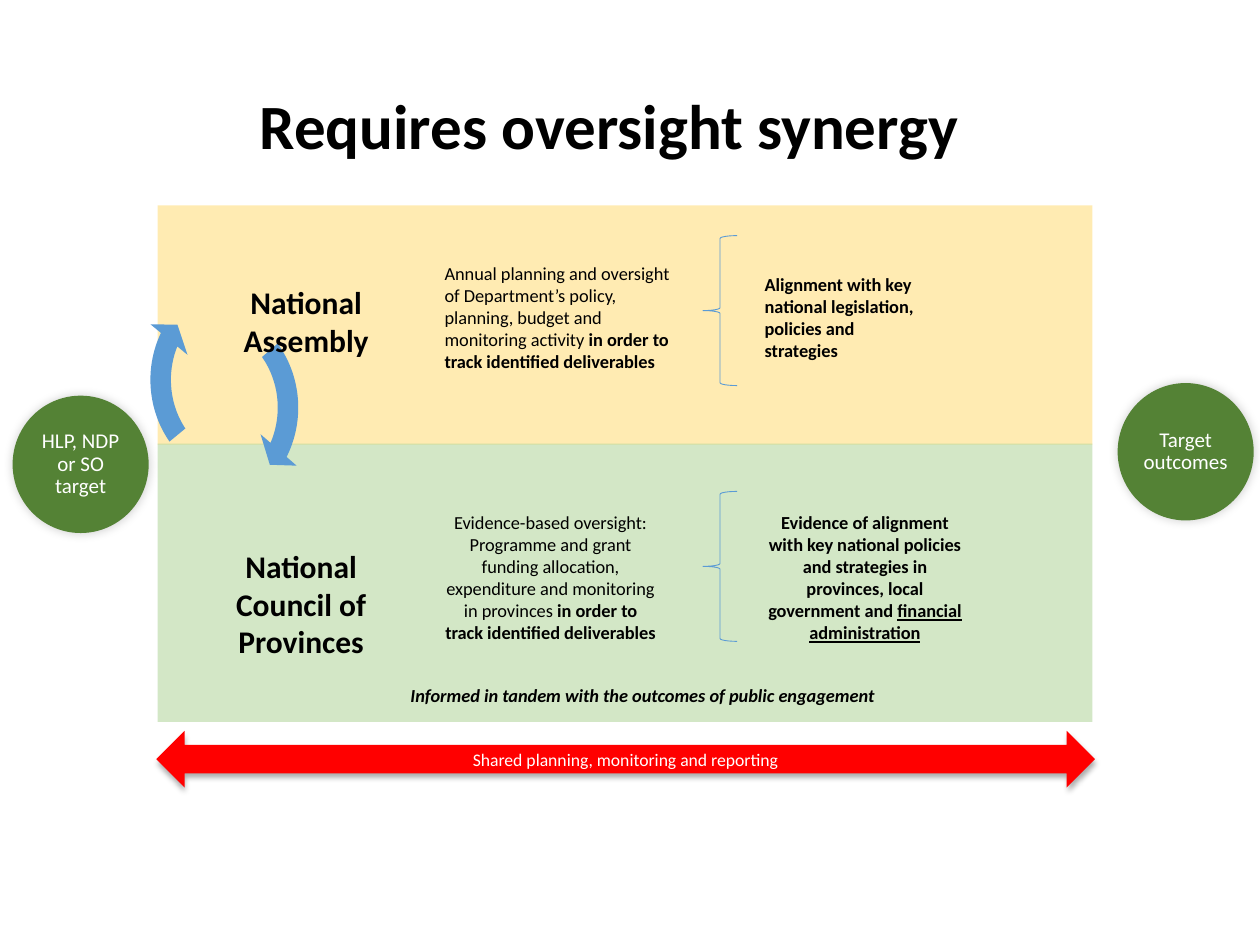
from lxml import etree
from pptx import Presentation
from pptx.dml.color import RGBColor
from pptx.enum.shapes import MSO_SHAPE as Preset
from pptx.enum.text import MSO_ANCHOR as Anchor, MSO_AUTO_SIZE as AutoSize, PP_ALIGN as Align
from pptx.oxml.ns import qn
from pptx.util import Inches, Pt

COLORS = {
    "text": "000000", "light_text": "FFFFFF", "assembly": "FFD966",
    "council": "A9D18E", "cycle": "5B9BD5", "goal": "548235", "shared": "FF0000",
}
FONT = "Calibri"
BODY_SIZE = 10.5
BOLD = {"bold": True}
UNDERLINED = {"bold": True, "underline": True}
DELIVERABLES = ("in order to track identified deliverables", BOLD)


def color(name):
    return RGBColor.from_string(COLORS[name])


def inches(box):
    return [Inches(value) for value in box]


def offset(box, left, top, width, height):
    """Place a part relative to the top left corner of a box."""
    return box[0] + left, box[1] + top, width, height


def write(frame, paragraphs, size, ink="text", **paragraph_format):
    """Fill a text frame; each paragraph is a list of (text, font format) runs."""
    frame.word_wrap = True
    for index, runs in enumerate(paragraphs):
        paragraph = frame.add_paragraph() if index else frame.paragraphs[0]
        for name, value in paragraph_format.items():
            setattr(paragraph, name, value)
        for text, font_format in runs:
            run = paragraph.add_run()
            run.text = text
            run.font.color.rgb = color(ink)
            for name, value in {"name": FONT, "size": Pt(size), **font_format}.items():
                setattr(run.font, name, value)


def add_text(slide, box, paragraphs, size=BODY_SIZE, alignment=Align.LEFT):
    frame = slide.shapes.add_textbox(*inches(box)).text_frame
    write(frame, paragraphs, size, alignment=alignment)
    frame.auto_size = AutoSize.SHAPE_TO_FIT_TEXT


def add_filled(slide, preset, box, fill, opacity=None):
    shape = slide.shapes.add_shape(preset, *inches(box))
    shape.shadow.inherit = False
    shape.fill.solid()
    shape.fill.fore_color.rgb = color(fill)
    shape.line.fill.background()
    if opacity:
        tint = shape._element.spPr.find(qn("a:solidFill"))[0]
        etree.SubElement(tint, qn("a:alpha"), val=str(opacity * 1000))
    return shape


def add_shadow(shape, opacity, blur, distance, angle):
    effects = shape._element.spPr.find(qn("a:effectLst"))
    shadow = etree.SubElement(
        effects, qn("a:outerShdw"), blurRad=str(Pt(blur)), dist=str(Pt(distance)),
        dir=str(angle * 60000), algn="ctr", rotWithShape="0")
    shade = etree.SubElement(shadow, qn("a:srgbClr"), val=COLORS["text"])
    etree.SubElement(shade, qn("a:alpha"), val=str(opacity * 1000))


def add_brace(slide, box):
    brace = slide.shapes.add_shape(Preset.LEFT_BRACE, *inches(box))
    brace.shadow.inherit = False
    brace.fill.background()
    brace.line.color.rgb = color("cycle")
    brace.line.width = Pt(0.5)


def add_title(slide, box):
    title = slide.shapes.title
    title.left, title.top, title.width, title.height = inches(box)
    frame = title.text_frame
    write(frame, [[("Requires oversight synergy", BOLD)]], 36, alignment=Align.LEFT)
    frame.vertical_anchor = Anchor.TOP
    frame.auto_size = AutoSize.SHAPE_TO_FIT_TEXT


def add_cycle(slide, box):
    """Two curved arrows that link the upper and the lower band."""
    for left, top, end_angle, start_angle in (
            (0.32, 0, 70.83, 30.314), (0, 0.22, 179.803, 137.341)):
        arrow = add_filled(slide, Preset.CIRCULAR_ARROW,
                           offset(box, left, top, 1.84, 1.71), "cycle")
        arrow.rotation = 90
        for index, value in enumerate((0.095, 6.857, end_angle, start_angle, 0.111)):
            arrow.adjustments[index] = value


def add_assembly(slide, box):
    add_text(slide, offset(box, 0.56, 0.57, 1.24, 0.71),
             [[("National Assembly", BOLD)]], 18, Align.CENTER)
    add_text(slide, offset(box, 2.18, 0.4, 1.99, 1.16), [[
        ("Annual planning and oversight of Department’s policy, planning, "
         "budget and monitoring activity ", {}), DELIVERABLES]])
    add_brace(slide, offset(box, 4.33, 0.24, 0.27, 1.19))
    add_text(slide, offset(box, 4.72, 0.49, 1.41, 0.81), [[
        ("Alignment with key national legislation, policies and strategies", BOLD)]])


def add_council(slide, box):
    add_text(slide, offset(box, 0.52, 0.77, 1.24, 1.01),
             [[("National Council of Provinces", BOLD)]], 18, Align.CENTER)
    add_text(slide, offset(box, 2.18, 0.49, 1.88, 1.51), [
        [("Evidence-based oversight:", {})],
        [("Programme and grant funding allocation, expenditure and monitoring "
          "in provinces ", {}), DELIVERABLES]], alignment=Align.CENTER)
    add_brace(slide, offset(box, 4.33, 0.38, 0.27, 1.19))
    add_text(slide, offset(box, 4.72, 0.49, 1.79, 1.16), [[
        ("Evidence of alignment with key national policies and strategies in "
         "provinces, local government and ", BOLD),
        ("financial administration", UNDERLINED)]], alignment=Align.CENTER)
    add_text(slide, offset(box, 1.91, 1.86, 3.93, 0.28), [[
        ("Informed in tandem with the outcomes of public engagement",
         {"bold": True, "italic": True})]])


def add_goal(slide, box, label):
    circle = add_filled(slide, Preset.OVAL, box, "goal")
    add_shadow(circle, 20, 6, 0, 315)
    frame = circle.text_frame
    for side in ("left", "top", "right", "bottom"):
        setattr(frame, f"margin_{side}", Inches(0.01))
    frame.vertical_anchor = Anchor.MIDDLE
    write(frame, [[(label, {})]], 12, "light_text",
          alignment=Align.CENTER, line_spacing=0.9)


def add_shared_arrow(slide, box):
    arrow = add_filled(slide, Preset.LEFT_RIGHT_ARROW, box, "shared")
    add_shadow(arrow, 32, 3.5, 2.2, 90)
    arrow.text_frame.vertical_anchor = Anchor.MIDDLE
    write(arrow.text_frame, [[("Shared planning, monitoring and reporting", {})]],
          10.1, "light_text", alignment=Align.CENTER)


def main():
    presentation = Presentation()
    presentation.slide_width, presentation.slide_height = Inches(10), Inches(7.5)
    slide = presentation.slides.add_slide(presentation.slide_layouts[5])
    assembly_box = (1.25, 1.63, 7.42, 1.9)
    council_box = (1.25, 3.52, 7.42, 2.21)

    add_title(slide, (1.96, 0.64, 6, 0.71))
    add_filled(slide, Preset.RECTANGLE, assembly_box, "assembly", opacity=50)
    add_filled(slide, Preset.RECTANGLE, council_box, "council", opacity=50)
    add_cycle(slide, (0.7, 2.16))
    add_assembly(slide, assembly_box)
    add_council(slide, council_box)
    add_goal(slide, (0.1, 3.14, 1.08, 1.09), "HLP, NDP or SO target")
    add_goal(slide, (8.87, 3.04, 1.08, 1.09), "Target outcomes")
    add_shared_arrow(slide, (1.24, 5.8, 7.45, 0.45))
    presentation.save("out.pptx")


if __name__ == "__main__":
    main()
